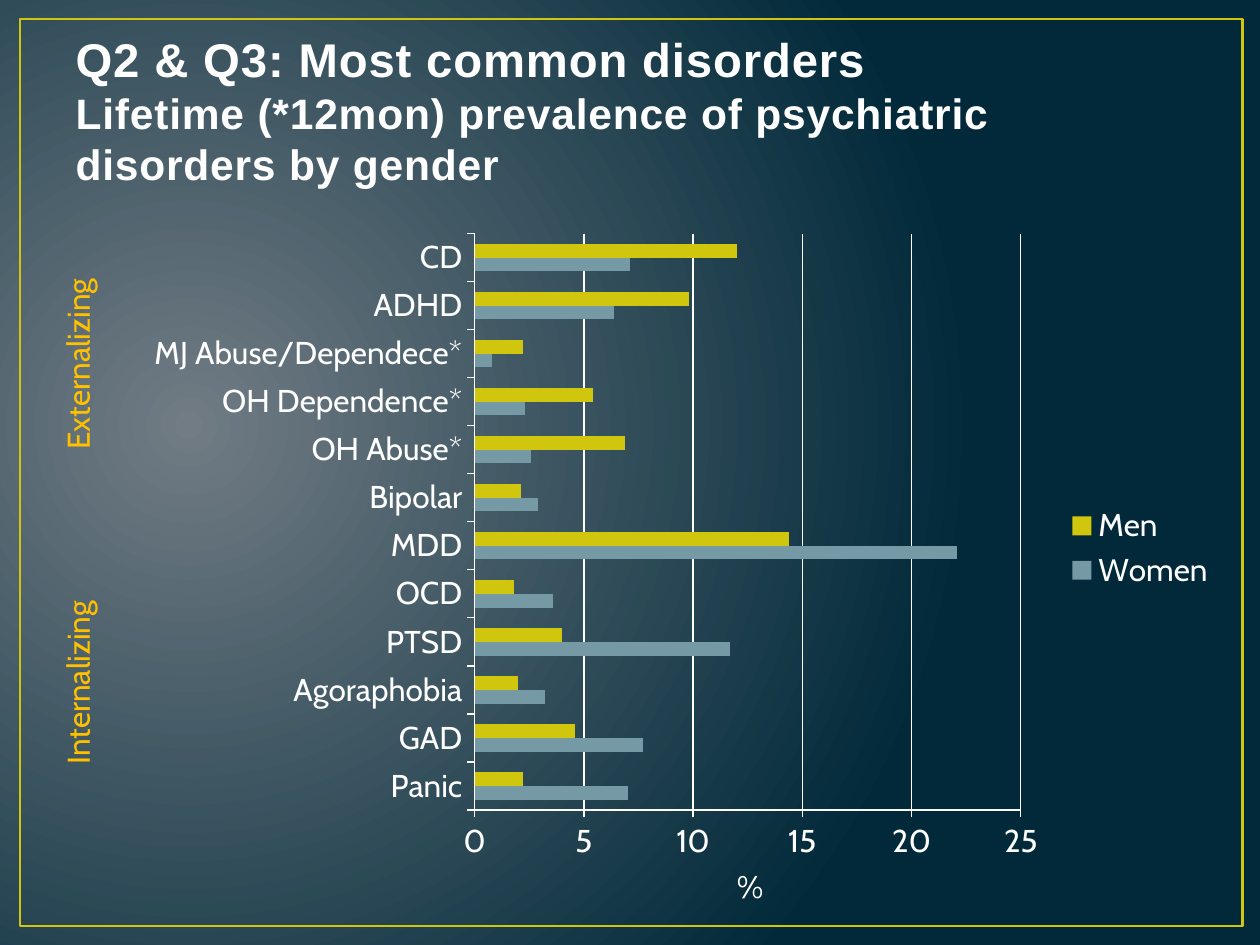
from dataclasses import dataclass

from lxml import etree
from pptx import Presentation
from pptx import util as u
from pptx.chart.data import CategoryChartData
from pptx.dml.color import RGBColor
from pptx.enum import chart as charts, shapes, text
from pptx.oxml import parse_xml
from pptx.oxml.ns import nsdecls, qn

COLUMNS, ROWS = 40, 30

DISORDERS = [  # name, women %, men %, from the bottom of the axis upwards
    ("Panic", 7, 2.2),
    ("GAD", 7.7, 4.6),
    ("Agoraphobia", 3.2, 2),
    ("PTSD", 11.7, 4),
    ("OCD", 3.6, 1.8),
    ("MDD", 22.1, 14.4),
    ("Bipolar", 2.9, 2.1),
    ("OH Abuse*", 2.6, 6.9),
    ("OH Dependence*", 2.3, 5.4),
    ("MJ Abuse/Dependece*", 0.8, 2.2),
    ("ADHD", 6.4, 9.8),
    ("CD", 7.1, 12),
]


@dataclass(frozen=True)
class Theme:
    glow: str = "717C84"
    night: str = "01293A"
    title: str = "FEFEFE"
    title_edge: str = "384F55"
    white: str = "FFFFFF"
    group: str = "FFC000"
    men: str = "CFC60D"
    women: str = "759AA5"
    title_font: str = "Arial"
    body_font: str = "Cabin"
    title_size: float = 27
    subtitle_size: float = 24.3
    body_size: float = 18


class SlideBuilder:
    def __init__(self, deck, theme):
        self.deck, self.theme = deck, theme
        self.slide = deck.slides.add_slide(deck.slide_layouts[5])

    def area(self, column, row, columns, rows):
        """Turn grid units into left, top, width and height."""
        across = self.deck.slide_width / COLUMNS
        down = self.deck.slide_height / ROWS
        return [u.Emu(round(n)) for n in
                (column * across, row * down, columns * across, rows * down)]

    def style(self, font, size, color, name):
        font.size, font.name = u.Pt(size), name
        font.color.rgb = RGBColor.from_string(color)

    def background(self):
        fill = self.slide.background.fill
        fill.gradient()
        for stop, color in zip(fill.gradient_stops, (self.theme.glow, self.theme.night)):
            stop.color.rgb = RGBColor.from_string(color)
        gradient = self.slide.background._cSld.find(".//" + qn("a:gradFill"))
        for stop, position in zip(gradient.iter(qn("a:gs")), ("0", "100000")):
            stop.set("pos", position)
        gradient.remove(gradient.find(qn("a:lin")))
        gradient.find(qn("a:gsLst")).addnext(parse_xml(
            f'<a:path {nsdecls("a")} path="circle">'
            '<a:fillToRect l="15000" t="50000" r="85000" b="60000"/></a:path>'))

    def frame(self, *cells):
        box = self.slide.shapes.add_shape(shapes.MSO_SHAPE.RECTANGLE, *self.area(*cells))
        box.shadow.inherit = False
        box.fill.background()
        box.line.color.rgb = RGBColor.from_string(self.theme.men)
        box.line.width = u.Pt(1.5)
        self.slide.shapes._spTree.insert(2, box._element)  # behind the title

    def title(self, heading, subheading, *cells):
        box = self.slide.shapes.title
        box.left, box.top, box.width, box.height = self.area(*cells)
        frame = box.text_frame
        frame.word_wrap = True
        frame.auto_size = text.MSO_AUTO_SIZE.NONE
        frame.vertical_anchor = text.MSO_ANCHOR.BOTTOM
        para = frame.paragraphs[0]
        para.alignment = text.PP_ALIGN.LEFT
        para.line_spacing = 1
        for words, size in ((heading, self.theme.title_size),
                            (subheading, self.theme.subtitle_size)):
            if para.runs:
                para.add_line_break()
            span = para.add_run()
            span.text = words
            span.font.bold = True
            self.style(span.font, size, self.theme.title, self.theme.title_font)
            properties = span._r.get_or_add_rPr()
            properties.set("spc", "50")
            outline = etree.Element(qn("a:ln"), w=str(u.Pt(1.05)))
            fill = etree.SubElement(outline, qn("a:solidFill"))
            etree.SubElement(fill, qn("a:srgbClr"), val=self.theme.title_edge)
            properties.insert(0, outline)

    def label(self, words, color, *cells, rotation=0):
        box = self.slide.shapes.add_textbox(*self.area(*cells))
        box.rotation = rotation
        box.text_frame.word_wrap = True
        box.text_frame.auto_size = text.MSO_AUTO_SIZE.SHAPE_TO_FIT_TEXT
        para = box.text_frame.paragraphs[0]
        para.text = words
        self.style(para.font, self.theme.body_size, color, self.theme.body_font)

    def bar_chart(self, rows, series, plot, *cells):
        """Draw clustered bars; plot gives the inner plot area as shares of the chart."""
        names, *columns = zip(*rows)
        data = CategoryChartData()
        data.categories = names
        for (name, _), values in zip(series, columns):
            data.add_series(name, values)
        chart = self.slide.shapes.add_chart(
            charts.XL_CHART_TYPE.BAR_CLUSTERED, *self.area(*cells), data).chart
        self.style(chart.font, self.theme.body_size, self.theme.white, self.theme.body_font)
        chart.has_title = False
        chart.has_legend = True
        chart.legend.position = charts.XL_LEGEND_POSITION.RIGHT
        chart.legend.include_in_layout = False

        bars = chart.plots[0]
        bars.gap_width, bars.overlap, bars.vary_by_categories = 150, 0, False
        for bar, (_, color) in zip(bars.series, series):
            bar.format.fill.solid()
            bar.format.fill.fore_color.rgb = RGBColor.from_string(color)

        scale = chart.value_axis
        scale.minimum_scale, scale.maximum_scale, scale.major_unit = 0, 25, 5
        scale.has_major_gridlines = True
        chart.category_axis.has_major_gridlines = False
        for axis in (chart.category_axis, scale):
            axis.major_tick_mark = charts.XL_TICK_MARK.OUTSIDE
        for part in (chart.category_axis, scale, scale.major_gridlines):
            part.format.line.color.rgb = RGBColor.from_string(self.theme.white)
            part.format.line.width = u.Pt(0.75)
        self.place_plot(chart, plot)

    def place_plot(self, chart, plot):
        area = chart._chartSpace.find(".//" + qn("c:plotArea"))
        for old in area.findall(qn("c:layout")):
            area.remove(old)
        layout = etree.Element(qn("c:layout"))
        manual = etree.SubElement(layout, qn("c:manualLayout"))
        settings = [("layoutTarget", "inner"), ("xMode", "edge"), ("yMode", "edge"),
                    *zip("xywh", map(str, plot))]
        for name, value in settings:
            etree.SubElement(manual, qn("c:" + name), val=value)
        area.insert(0, layout)


def main():
    deck = Presentation()
    deck.slide_width, deck.slide_height = u.Inches(10), u.Inches(7.5)
    theme = Theme()
    page = SlideBuilder(deck, theme)
    page.background()
    page.frame(0.64, 0.6, 38.8, 28.8)
    page.title("Q2 & Q3: Most common disorders",
               "Lifetime (*12mon) prevalence of psychiatric disorders by gender",
               2, 1.2, 36, 5)
    page.bar_chart(DISORDERS, [("Women", theme.women), ("Men", theme.men)],
                   (0.31, 0.02, 0.5, 0.88), 4.32, 7, 34.68, 20.8)
    for row, group in ((10.36, "Externalizing"), (20.36, "Internalizing")):
        page.label(group, theme.group, -1.04, row, 7, 1.6, rotation=270)
    page.label("%", theme.white, 23, 27.32, 3, 1.6)
    deck.save("out.pptx")


if __name__ == "__main__":
    main()
